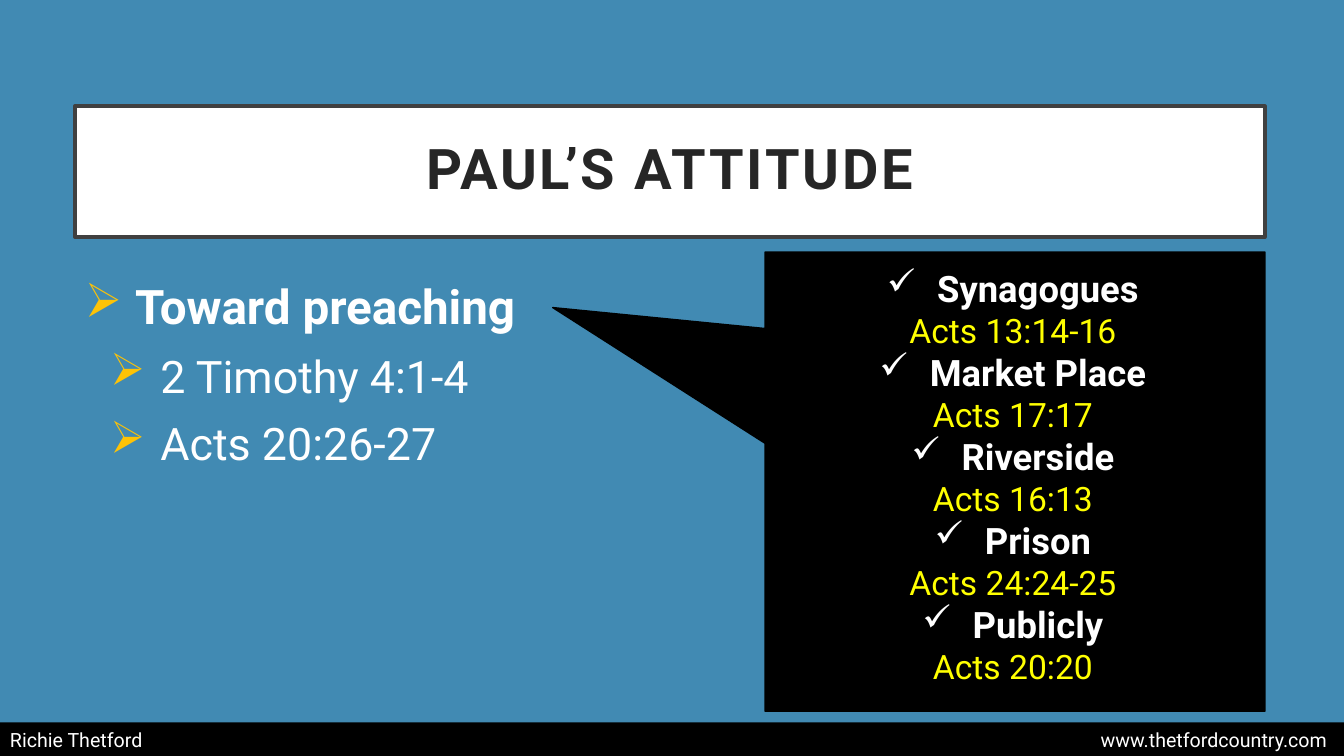
from lxml import etree
from pptx import Presentation
from pptx.dml.color import RGBColor
from pptx.enum import shapes, text
from pptx.oxml import ns
from pptx.util import Pt

BLUE = RGBColor(0x41, 0x8A, 0xB3)
WHITE = RGBColor(0xFF, 0xFF, 0xFF)
BLACK = RGBColor(0, 0, 0)
GREY = RGBColor(0x40, 0x40, 0x40)
DARK = RGBColor(0x26, 0x26, 0x26)
GOLD = RGBColor(0xFE, 0xC3, 0x06)
YELLOW = RGBColor(0xFF, 0xFF, 0)
FONT = "Roboto"
LEFT = text.PP_ALIGN.LEFT
CENTER = text.PP_ALIGN.CENTER


def add_shape(slide, kind, box, fill, line=None, width=1):
    shape = slide.shapes.add_shape(kind, *map(Pt, box))
    shape.shadow.inherit = False
    shape.fill.solid()
    shape.fill.fore_color.rgb = fill
    if line is None:
        shape.line.fill.background()
    else:
        shape.line.color.rgb = line
        shape.line.width = Pt(width)
    return shape


def add_box(slide, box):
    frame = slide.shapes.add_textbox(*map(Pt, box)).text_frame
    frame.word_wrap = True
    return frame


def next_para(frame, index, align):
    para = frame.paragraphs[0] if index == 0 else frame.add_paragraph()
    para.alignment = align
    return para


def add_run(para, words, size, color, bold=False):
    run = para.add_run()
    run.text = words
    run.font.name = FONT
    run.font.size = Pt(size)
    run.font.color.rgb = color
    run.font.bold = bold
    return run


def add_bullet(para, mark, left, hang, color):
    props = para._p.get_or_add_pPr()
    props.set("marL", str(Pt(left)))
    props.set("indent", str(-Pt(hang)))
    tint = etree.SubElement(props, ns.qn("a:buClr"))
    etree.SubElement(tint, ns.qn("a:srgbClr")).set("val", str(color))
    etree.SubElement(props, ns.qn("a:buChar")).set("char", mark)


def add_title(slide, box, words):
    shape = add_shape(slide, shapes.MSO_SHAPE.RECTANGLE, box, WHITE, GREY, 2.5)
    frame = shape.text_frame
    frame.vertical_anchor = text.MSO_ANCHOR.MIDDLE
    para = next_para(frame, 0, CENTER)
    para.line_spacing = 0.9
    run = add_run(para, words, 40, DARK, True)
    run.font._element.set("spc", "200")


def add_points(slide, box, head, items):
    frame = add_box(slide, box)
    for i, words in enumerate([head] + items):
        para = next_para(frame, i, LEFT)
        add_bullet(para, "➢", 54 if i else 36, 36, GOLD)
        if i:
            para.level = 1
            para.space_before = Pt(10)
        add_run(para, words, 32 if i else 34, WHITE, i == 0)


def add_callout(slide, box, places):
    x, y, w, h = box
    turned = (x + (w - h) / 2, y + (h - w) / 2, h, w)
    kind = shapes.MSO_SHAPE.RECTANGULAR_CALLOUT
    shape = add_shape(slide, kind, turned, BLACK, BLACK)
    shape.rotation = 90
    shape.adjustments[0] = -0.379
    shape.adjustments[1] = 0.925
    frame = add_box(slide, (x + 7.5, y + 6.5, w - 18, h - 5))
    for i, (place, verse) in enumerate(places):
        para = next_para(frame, i, CENTER)
        add_bullet(para, "✓", 36, 36, WHITE)
        add_run(para, place, 26, WHITE, True)
        add_run(next_para(frame, i + 1, CENTER), verse, 24, YELLOW)


def add_footer(slide, box, name, site):
    shape = add_shape(slide, shapes.MSO_SHAPE.RECTANGLE, box, BLACK)
    frame = shape.text_frame
    frame.vertical_anchor = text.MSO_ANCHOR.MIDDLE
    para = next_para(frame, 0, LEFT)
    tabs = etree.SubElement(para._p.get_or_add_pPr(), ns.qn("a:tabLst"))
    stop = etree.SubElement(tabs, ns.qn("a:tab"))
    stop.set("pos", str(Pt(box[2] - 19)))
    stop.set("algn", "r")
    add_run(para, name + "\t" + site, 14, WHITE)


def main():
    deck = Presentation()
    deck.slide_width = Pt(960)
    deck.slide_height = Pt(540)
    slide = deck.slides.add_slide(deck.slide_layouts[6])
    slide.background.fill.solid()
    slide.background.fill.fore_color.rgb = BLUE
    add_title(slide, (53.5, 75.8, 850, 93.6), "PAUL’S ATTITUDE")
    add_points(slide, (53.5, 194.5, 480, 308), "Toward preaching",
               ["2 Timothy 4:1-4", "Acts 20:26-27"])
    add_footer(slide, (0, 516, 960, 24), "Richie Thetford",
               "www.thetfordcountry.com")
    add_callout(slide, (546.5, 180, 357, 328), [
        ("Synagogues", "Acts 13:14-16"),
        ("Market Place", "Acts 17:17"),
        ("Riverside", "Acts 16:13"),
        ("Prison", "Acts 24:24-25"),
        ("Publicly", "Acts 20:20"),
    ])
    deck.save("out.pptx")


if __name__ == "__main__":
    main()
